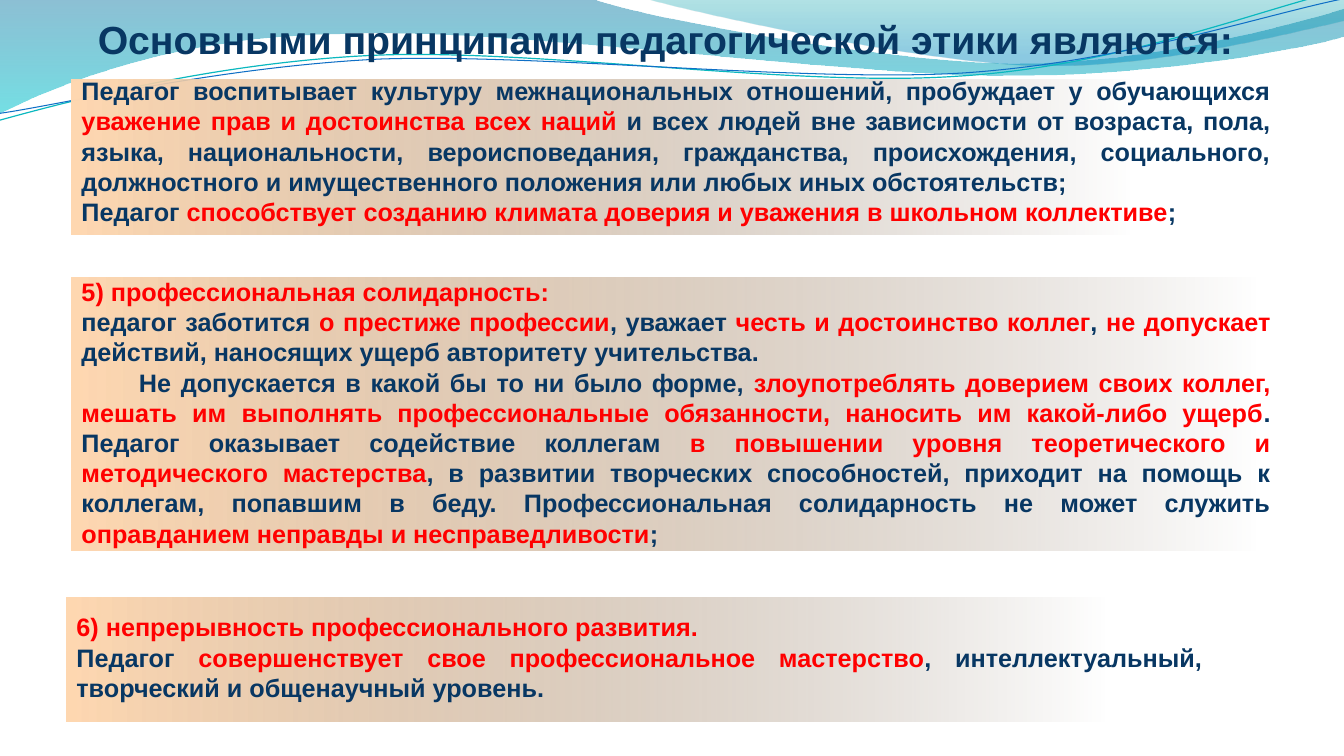
"""Build a slide on the principles of teaching ethics."""
from lxml import etree
from pptx import Presentation
from pptx.dml.color import RGBColor
from pptx.enum.shapes import MSO_SHAPE
from pptx.enum.text import MSO_AUTO_SIZE, PP_ALIGN
from pptx.oxml.ns import qn
from pptx.util import Pt

RECTANGLE = MSO_SHAPE.RECTANGLE
CENTER, JUSTIFY = PP_ALIGN.CENTER, PP_ALIGN.JUSTIFY
FIT_SHAPE = MSO_AUTO_SIZE.SHAPE_TO_FIT_TEXT
PX = 9144
LINE_ROTATION = 357.3
THEME = {
    "font": "Arial", "title_size": 28, "body_size": 18,
    "navy": "083763", "red": "FF0000",
    "panel": [(0, "FFD8B1", 100), (1, "766452", 0)],
    "wave": [(0, "0074A1", 45), (1, "00C6CF", 55)],
    "crest": [(0, "00A1A9", 30), (0.8, "008BBF", 45)],
    "teal_line": ("0AB8BF", 0.85), "blue_line": ("0F6FC6", 0.75),
}


def fill_gradient(sp, stops, angle):
    """Fill a shape with a two-stop gradient and no outline."""
    sp.shadow.inherit = False
    sp.line.fill.background()
    sp.fill.gradient()
    sp.fill.gradient_angle = angle
    for stop, (position, color, _) in zip(sp.fill.gradient_stops, stops):
        stop.position = position
        stop.color.rgb = RGBColor.from_string(color)
    for clr, (_, _, opacity) in zip(sp._element.spPr.iter(qn("a:srgbClr")), stops):
        if opacity < 100:
            etree.SubElement(clr, qn("a:alpha"), val=str(opacity * 1000))


def add_text(s, box, paragraphs, size, align):
    """Add a bold text box; parts between asterisks are red."""
    tf = s.shapes.add_textbox(*(v * PX for v in box)).text_frame
    tf.word_wrap = True
    tf.auto_size = FIT_SHAPE
    for i, (indent, text) in enumerate(paragraphs):
        p = tf.paragraphs[0] if i == 0 else tf.add_paragraph()
        p.alignment = align
        if indent:
            p._p.get_or_add_pPr().set("indent", str(indent * PX))
        for j, part in enumerate(text.split("*")):
            if part:
                r = p.add_run()
                r.text = part
                fmt = {"name": THEME["font"], "size": Pt(size), "bold": True}
                for key, value in fmt.items():
                    setattr(r.font, key, value)
                r.font.color.rgb = RGBColor.from_string(THEME["red" if j % 2 else "navy"])


prs = Presentation()
prs.slide_width, prs.slide_height = 1333 * PX, 750 * PX
s = prs.slides.add_slide(prs.slide_layouts[6])

waves = [
    ("wave", (0, 0), [
        (587, -1), (634, 17, 885, 63, 1011, 63), (1138, 63, 1278, 26, 1333, 9),
        (1335, 36), (1311, 44, 1160, 76, 994, 75), (829, 75, 509, 28, 343, 34),
        (172, 36, 61, 83, -1, 113), (0, 0)]),
    ("crest", (639, -1), [
        (679, 11, 909, 62, 1025, 65), (1141, 69, 1282, 32, 1333, 21),
        (1333, 0), (639, -1)]),
    ("teal_line", (-3, 88), [
        (63, 73, 211, 41, 369, 41), (528, 41, 788, 93, 949, 89),
        (1109, 87, 1254, 36, 1333, 22)]),
    ("blue_line", (-2, 81), [
        (62, 75, 218, 45, 378, 45), (537, 47, 795, 88, 954, 86),
        (1114, 83, 1256, 42, 1336, 30)]),
]
for style, start, segments in waves:
    is_line = style.endswith("line")
    points = [seg[i:i + 2] for seg in segments for i in range(0, len(seg), 2)]
    builder = s.shapes.build_freeform(*start, scale=PX)
    builder.add_line_segments(points, close=not is_line)
    sp = builder.convert_to_shape()
    steps = iter(list(sp._element.iter(qn("a:lnTo"))))
    for seg in segments:
        step = next(steps)
        if len(seg) == 6:
            step.tag = qn("a:cubicBezTo")
            for extra in (next(steps), next(steps)):
                step.append(extra[0])
                extra.getparent().remove(extra)
    if is_line:
        color, width = THEME[style]
        sp.rotation = LINE_ROTATION
        sp.shadow.inherit = False
        sp.fill.background()
        sp.line.color.rgb = RGBColor.from_string(color)
        sp.line.width = Pt(width)
    else:
        fill_gradient(sp, THEME[style], 270)

add_text(s, (50, 10, 1220, 57),
         [(0, "Основными принципами педагогической этики являются:")],
         THEME["title_size"], CENTER)

panels = [
    ((71, 79, 1055, 154), (71, 70, 1199, 162), [
        (0, "Педагог воспитывает культуру межнациональных отношений, пробуждает у "
            "обучающихся *уважение прав и достоинства всех наций *и всех людей вне "
            "зависимости от возраста, пола, языка, национальности, вероисповедания, "
            "гражданства, происхождения, социального, должностного и имущественного "
            "положения или любых иных обстоятельств;"),
        (0, "Педагог *способствует созданию климата доверия и уважения в школьном "
            "коллективе*;")]),
    ((71, 275, 1180, 271), (71, 269, 1199, 283), [
        (0, "*5) профессиональная солидарность:"),
        (0, "педагог заботится *о престиже профессии*, уважает *честь и достоинство "
            "коллег*, *не допускает* действий, наносящих ущерб авторитету "
            "учительства."),
        (57, "Не допускается в какой бы то ни было форме, *злоупотреблять доверием "
             "своих коллег, мешать им выполнять профессиональные обязанности, "
             "наносить им какой-либо ущерб*. Педагог оказывает содействие коллегам "
             "*в повышении уровня теоретического и методического мастерства*, в "
             "развитии творческих способностей, приходит на помощь к коллегам, "
             "попавшим в беду. Профессиональная солидарность не может служить "
             "*оправданием неправды и несправедливости*;")]),
    ((66, 593, 1034, 123), (66, 602, 1136, 101), [
        (0, "*6) непрерывность профессионального развития."),
        (0, "Педагог *совершенствует свое профессиональное мастерство*, "
            "интеллектуальный, творческий и общенаучный уровень.")]),
]
for panel_box, text_box, paragraphs in panels:
    sp = s.shapes.add_shape(RECTANGLE, *(v * PX for v in panel_box))
    fill_gradient(sp, THEME["panel"], 0)
    add_text(s, text_box, paragraphs, THEME["body_size"], JUSTIFY)

prs.save("out.pptx")
